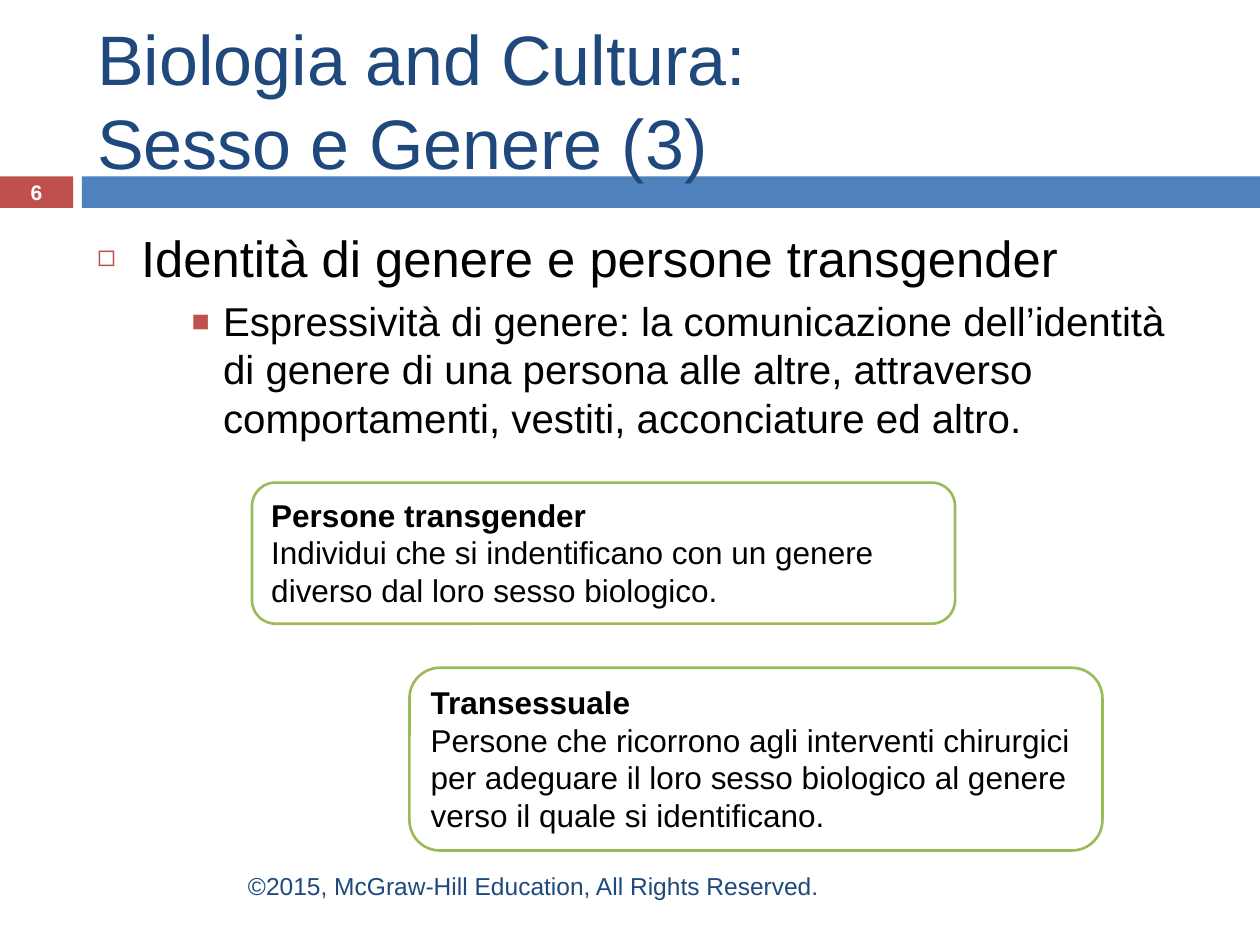
from lxml.etree import SubElement
from pptx import Presentation
from pptx.dml.color import RGBColor
from pptx.enum.shapes import MSO_SHAPE as Shape
from pptx.enum.text import MSO_ANCHOR as Anchor, MSO_AUTO_SIZE as Fit, PP_ALIGN as Align
from pptx.oxml.ns import qn
from pptx.util import Inches, Pt

WIDTH, HEIGHT = 10, 7.5
MARGIN, CONTENT_WIDTH = 0.67, 8.92
BAND_TOP, BAND_HEIGHT, NUMBER_WIDTH, BAND_LEFT = 1.4, 0.25, 0.58, 0.65
RED, BLUE, GREEN, NAVY = "C0504D", "4F81BD", "9BBB59", "1F497D"
BLACK, WHITE = "000000", "FFFFFF"

OUTLINE = [
    dict(text="Identità di genere e persone transgender", level=0, size=29,
         indent=0.35, hang=0.35, before=0, mark="◻", mark_size=60),
    dict(text="Espressività di genere: la comunicazione dell’identità di genere "
              "di una persona alle altre, attraverso comportamenti, vestiti, "
              "acconciature ed altro.", level=2, size=23,
         indent=1, hang=0.25, before=5, mark="■", mark_size=75),
]
DEFINITIONS = [
    ("Persone transgender",
     "Individui che si indentificano con un genere diverso dal loro sesso biologico.",
     (2, 3.83, 5.58, 1.12)),
    ("Transessuale",
     "Persone che ricorrono agli interventi chirurgici per adeguare il loro sesso "
     "biologico al genere verso il quale si identificano.",
     (3.25, 5.3, 5.5, 1.45)),
]


def color(code):
    return RGBColor.from_string(code)


def inches(box):
    return [Inches(length) for length in box]


def place(shape, box):
    for side, length in zip(("left", "top", "width", "height"), inches(box)):
        setattr(shape, side, length)


def set_frame(frame, anchor, fit=Fit.NONE):
    settings = dict(word_wrap=True, auto_size=fit, vertical_anchor=anchor)
    for name, value in settings.items():
        setattr(frame, name, value)


def format_text(paragraph, size, code, bold=False, align=Align.LEFT):
    paragraph.alignment = align
    font = paragraph.font
    for name, value in dict(name="Arial", size=Pt(size), bold=bold).items():
        setattr(font, name, value)
    font.color.rgb = color(code)


def add_band(slide, box, code):
    """Add a filled bar behind everything already on the slide."""
    band = slide.shapes.add_shape(Shape.RECTANGLE, *inches(box))
    band.shadow.inherit = False
    band.fill.solid()
    band.fill.fore_color.rgb = color(code)
    band.line.fill.background()
    slide.shapes.title.element.addprevious(band.element)


def fill_title(title, text):
    place(title, (MARGIN, 0.25, CONTENT_WIDTH, 1.08))
    set_frame(title.text_frame, Anchor.MIDDLE)
    title.text_frame.text = text
    format_text(title.text_frame.paragraphs[0], 40, NAVY)


def add_bullet(paragraph, item):
    props = paragraph._p.get_or_add_pPr()
    props.set("marL", str(Inches(item["indent"])))
    props.set("indent", str(-Inches(item["hang"])))
    SubElement(SubElement(props, qn("a:buClr")), qn("a:srgbClr"), val=RED)
    SubElement(props, qn("a:buSzPct"), val=str(item["mark_size"] * 1000))
    SubElement(props, qn("a:buFont"), typeface="Arial")
    SubElement(props, qn("a:buChar"), char=item["mark"])


def fill_outline(body, items):
    place(body, (MARGIN, 1.75, CONTENT_WIDTH, 4.92))
    frame = body.text_frame
    set_frame(frame, Anchor.TOP)
    frame.text = "\n".join(item["text"] for item in items)
    for paragraph, item in zip(frame.paragraphs, items):
        paragraph.level = item["level"]
        add_bullet(paragraph, item)
        paragraph.space_before = Pt(item["before"])
        format_text(paragraph, item["size"], BLACK)


def add_definition(slide, term, meaning, box):
    card = slide.shapes.add_shape(Shape.ROUNDED_RECTANGLE, *inches(box))
    card.shadow.inherit = False
    card.fill.solid()
    card.fill.fore_color.rgb = color(WHITE)
    card.line.color.rgb = color(GREEN)
    card.line.width = Pt(1.5)
    frame = card.text_frame
    set_frame(frame, Anchor.TOP, Fit.SHAPE_TO_FIT_TEXT)
    frame.text = f"{term}\n{meaning}"
    for paragraph, bold in zip(frame.paragraphs, (True, False)):
        format_text(paragraph, 18, BLACK, bold)


def add_label(slide, text, box, size, code, bold, align):
    frame = slide.shapes.add_textbox(*inches(box)).text_frame
    set_frame(frame, Anchor.MIDDLE)
    frame.text = text
    format_text(frame.paragraphs[0], size, code, bold, align)


def main():
    deck = Presentation()
    deck.slide_width, deck.slide_height = inches((WIDTH, HEIGHT))
    slide = deck.slides.add_slide(deck.slide_layouts[1])

    # Header bands, title and outline
    add_band(slide, (0, BAND_TOP, NUMBER_WIDTH, BAND_HEIGHT), RED)
    add_band(slide, (BAND_LEFT, BAND_TOP, WIDTH - BAND_LEFT, BAND_HEIGHT), BLUE)
    fill_title(slide.shapes.title, "Biologia and Cultura:\vSesso e Genere (3)")
    fill_outline(slide.placeholders[1], OUTLINE)

    # Slide number
    add_label(slide, "6", (0, BAND_TOP, NUMBER_WIDTH, BAND_HEIGHT),
              12, WHITE, True, Align.CENTER)

    # Definitions
    for term, meaning, box in DEFINITIONS:
        add_definition(slide, term, meaning, box)

    # Footer
    add_label(slide, "©2015, McGraw-Hill Education, All Rights Reserved.",
              (MARGIN, 6.83, 5.93, 0.4), 14, NAVY, False, Align.RIGHT)

    deck.save("out.pptx")


if __name__ == "__main__":
    main()
